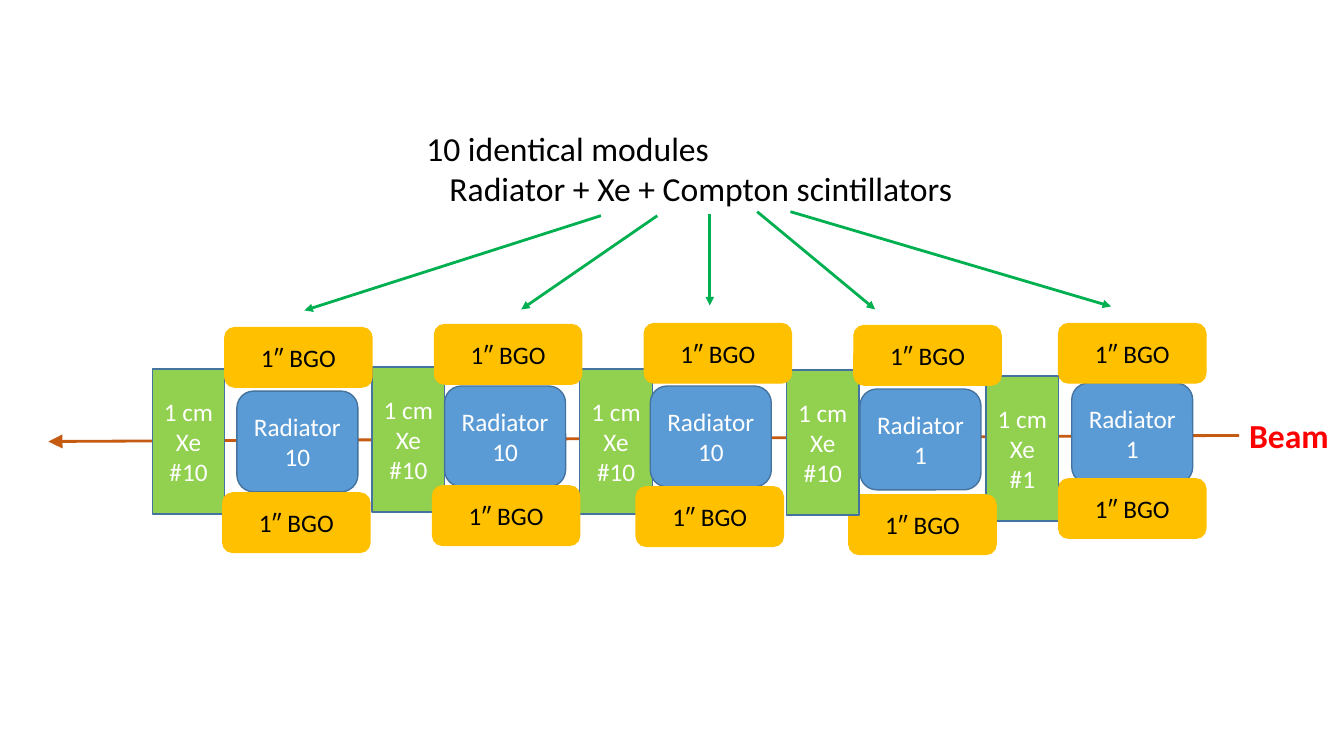
from dataclasses import dataclass

from lxml import etree
from pptx import Presentation
from pptx.dml.color import RGBColor
from pptx.enum.shapes import MSO_CONNECTOR, MSO_SHAPE
from pptx.enum.text import MSO_ANCHOR, MSO_AUTO_SIZE, PP_ALIGN
from pptx.oxml.ns import qn
from pptx.slide import Slide
from pptx.text.text import TextFrame
from pptx.util import Inches, Pt

STRAIGHT = MSO_CONNECTOR.STRAIGHT
RECTANGLE = MSO_SHAPE.RECTANGLE
ROUNDED = MSO_SHAPE.ROUNDED_RECTANGLE
MIDDLE = MSO_ANCHOR.MIDDLE
CENTER = PP_ALIGN.CENTER
GROW = MSO_AUTO_SIZE.SHAPE_TO_FIT_TEXT

Point = tuple[float, float]


@dataclass(frozen=True)
class Theme:
    font: str = "Calibri"
    block_size: int = 18
    label_size: int = 24
    outline: float = 1
    arrow: float = 2
    white: str = "FFFFFF"
    black: str = "000000"
    radiator: str = "5B9BD5"
    xenon: str = "92D050"
    edge: str = "43739E"
    bgo: str = "FFC000"
    beam: str = "C55A11"
    beam_label: str = "FF0000"
    pointer: str = "00B050"


THEME = Theme()


@dataclass(frozen=True)
class BlockStyle:
    preset: MSO_SHAPE
    size: Point
    fill: str
    edge: str
    ink: str


XENON = BlockStyle(RECTANGLE, (0.72, 1.44), THEME.xenon, THEME.edge, THEME.white)
RADIATOR = BlockStyle(ROUNDED, (1.2, 1), THEME.radiator, THEME.edge, THEME.white)
BGO = BlockStyle(ROUNDED, (1.46, 0.59), THEME.bgo, THEME.bgo, THEME.black)


@dataclass(frozen=True)
class Module:
    """Top-left corners and numbers of one detector module."""
    xenon_number: int
    radiator_number: int
    xenon: Point
    radiator: Point
    upper_bgo: Point
    lower_bgo: Point
    lower_bgo_behind: bool = False


@dataclass(frozen=True)
class Arrow:
    start: Point
    end: Point
    color: str = THEME.pointer
    head: str = "med"


@dataclass(frozen=True)
class Label:
    lines: tuple[str, ...]
    corner: Point
    size: Point
    color: str
    bold: bool = False
    later_indent: float = 0


# Upstream first: each module overlaps the one before it.
MODULES = (
    Module(1, 1, (9.78, 3.73), (10.63, 3.8), (10.5, 3.21), (10.5, 4.75)),
    Module(10, 1, (7.8, 3.67), (8.53, 3.86), (8.47, 3.23), (8.42, 4.91), True),
    Module(10, 10, (5.75, 3.66), (6.45, 3.83), (6.39, 3.21), (6.31, 4.83)),
    Module(10, 10, (3.69, 3.64), (4.41, 3.83), (4.31, 3.22), (4.29, 4.82)),
    Module(10, 10, (1.51, 3.66), (2.35, 3.88), (2.23, 3.25), (2.21, 4.89)),
)
BEAM = Arrow((12.29, 4.32), (0.48, 4.38), THEME.beam, "lg")
POINTERS = (
    Arrow((5.96, 2.14), (3.02, 3.08)),
    Arrow((6.52, 2.14), (5.17, 3.07)),
    Arrow((7.04, 2.12), (7.04, 3.03)),
    Arrow((7.51, 2.1), (8.68, 3.07)),
    Arrow((7.84, 2.1), (11.02, 3.04)),
)
LABELS = (
    Label(("Beam",), (12.29, 4.07), (1, 0.5), THEME.beam_label, bold=True),
    Label(("10 identical modules", "Radiator + Xe + Compton scintillators"),
          (4.13, 1.22), (5.46, 0.91), THEME.black, later_indent=0.23),
)


def write(frame: TextFrame, lines: tuple[str, ...], size: int, color: str,
          bold: bool = False) -> None:
    frame.text = "\n".join(lines)
    formats = {"name": THEME.font, "size": Pt(size), "bold": bold}
    for paragraph in frame.paragraphs:
        font = paragraph.runs[0].font
        for attribute, value in formats.items():
            setattr(font, attribute, value)
        font.color.rgb = RGBColor.from_string(color)


def draw_block(slide: Slide, style: BlockStyle, corner: Point, text: str) -> None:
    block = slide.shapes.add_shape(
        style.preset, *(Inches(length) for length in corner + style.size))
    block.shadow.inherit = False
    block.fill.solid()
    block.fill.fore_color.rgb = RGBColor.from_string(style.fill)
    block.line.color.rgb = RGBColor.from_string(style.edge)
    block.line.width = Pt(THEME.outline)
    frame = block.text_frame
    write(frame, (text,), THEME.block_size, style.ink)
    frame.word_wrap = True
    frame.vertical_anchor = MIDDLE
    frame.paragraphs[0].alignment = CENTER


def draw_module(slide: Slide, module: Module) -> None:
    core = [
        (XENON, module.xenon, f"1 cm Xe #{module.xenon_number}"),
        (RADIATOR, module.radiator, f"Radiator {module.radiator_number}"),
    ]
    upper, lower = ((BGO, corner, "1″ BGO")
                    for corner in (module.upper_bgo, module.lower_bgo))
    blocks = [lower, *core, upper] if module.lower_bgo_behind else [*core, lower, upper]
    for style, corner, text in blocks:
        draw_block(slide, style, corner, text)


def draw_arrow(slide: Slide, arrow: Arrow) -> None:
    connector = slide.shapes.add_connector(
        STRAIGHT, *(Inches(length) for length in arrow.start + arrow.end))
    connector.line.color.rgb = RGBColor.from_string(arrow.color)
    connector.line.width = Pt(THEME.arrow)
    etree.SubElement(connector.line._get_or_add_ln(), qn("a:tailEnd"),
                     type="triangle", w=arrow.head, len=arrow.head)
    etree.SubElement(connector._element.spPr, qn("a:effectLst"))


def draw_label(slide: Slide, label: Label) -> None:
    box = slide.shapes.add_textbox(
        *(Inches(length) for length in label.corner + label.size))
    frame = box.text_frame
    write(frame, label.lines, THEME.label_size, label.color, label.bold)
    frame.word_wrap = False
    frame.auto_size = GROW
    for paragraph in frame.paragraphs[1:]:
        properties = paragraph._p.get_or_add_pPr()
        properties.set("marL", str(Inches(label.later_indent)))
        properties.set("indent", "0")


def main() -> None:
    presentation = Presentation()
    presentation.slide_width = Inches(13.33)
    presentation.slide_height = Inches(7.5)
    slide = presentation.slides.add_slide(presentation.slide_layouts[6])
    draw_arrow(slide, BEAM)
    for module in MODULES:
        draw_module(slide, module)
    for label in LABELS:
        draw_label(slide, label)
    for pointer in POINTERS:
        draw_arrow(slide, pointer)
    presentation.save("out.pptx")


if __name__ == "__main__":
    main()
